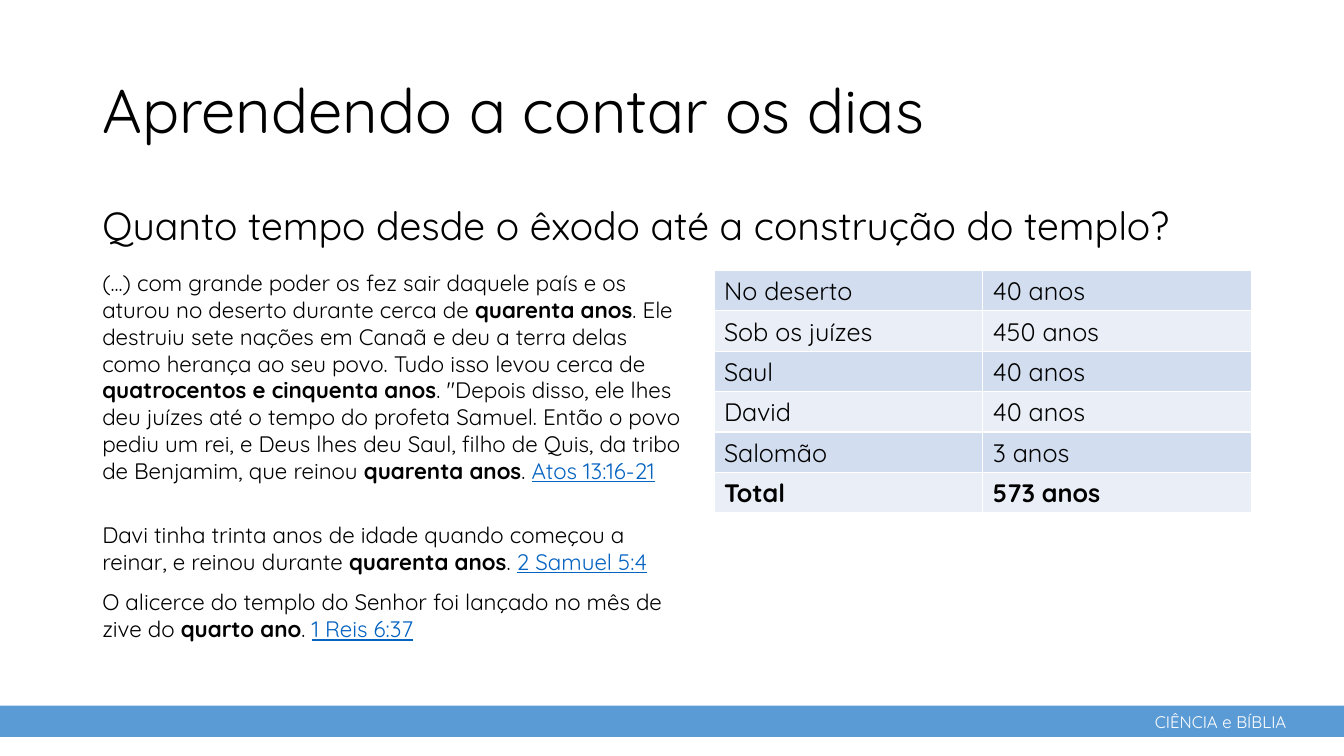
from dataclasses import dataclass

import pptx
import pptx.dml.color
import pptx.enum.shapes
import pptx.enum.text
import pptx.oxml
import pptx.oxml.ns
import pptx.util

COLUMNS, ROWS = 160, 90
UNIT = pptx.util.Inches(7.5) // ROWS


@dataclass(frozen=True)
class Theme:
    font: str = "Quicksand"
    ink: str = "000000"
    paper: str = "FFFFFF"
    bar: str = "5B9BD5"
    reference: str = "0563C1"
    bands: tuple = ("D2DEEF", "EAEFF7")
    title: int = 44
    question: int = 28
    table: int = 18
    passage: int = 16
    footer: int = 12


THEME = Theme()

PASSAGES = [
    ((11, 31.44, 71.5, 30.24),
     "(...) com grande poder os fez sair daquele país e os aturou no deserto "
     "durante cerca de *quarenta anos*. Ele destruiu sete nações em Canaã e deu "
     "a terra delas como herança ao seu povo. Tudo isso levou cerca de "
     "*quatrocentos e cinquenta anos*. \"Depois disso, ele lhes deu juízes até o "
     "tempo do profeta Samuel. Então o povo pediu um rei, e Deus lhes deu Saul, "
     "filho de Quis, da tribo de Benjamim, que reinou *quarenta anos*. ",
     "Atos 13:16-21"),
    ((11, 61.44, 71.5, 7.68),
     "Davi tinha trinta anos de idade quando começou a reinar, e reinou durante "
     "*quarenta anos*. ",
     "2 Samuel 5:4"),
    ((11, 69.48, 71.5, 7.68),
     "O alicerce do templo do Senhor foi lançado no mês de zive do "
     "*quarto ano*. ",
     "1 Reis 6:37"),
]

PERIODS = [
    ("No deserto", "40 anos"),
    ("Sob os juízes", "450 anos"),
    ("Saul", "40 anos"),
    ("David", "40 anos"),
    ("Salomão", "3 anos"),
    ("Total", "573 anos"),
]


def place(box):
    return [pptx.util.Emu(round(v * UNIT)) for v in box]


def rgb(color):
    return pptx.dml.color.RGBColor.from_string(color)


def style(r, size, color=THEME.ink, bold=False, underline=False):
    r.font.name = THEME.font
    r.font.size = pptx.util.Pt(size)
    r.font.color.rgb = rgb(color)
    r.font.bold = bold
    r.font.underline = underline


def text_box(s, box, wrap=True):
    tf = s.shapes.add_textbox(*place(box)).text_frame
    tf.word_wrap = wrap
    return tf


def add_title(s, box, text):
    sp = s.shapes.title
    sp.left, sp.top, sp.width, sp.height = place(box)
    tf = sp.text_frame
    tf.text = text
    tf.word_wrap = True
    tf.auto_size = pptx.enum.text.MSO_AUTO_SIZE.NONE
    tf.vertical_anchor = pptx.enum.text.MSO_ANCHOR.MIDDLE
    p = tf.paragraphs[0]
    p.alignment = pptx.enum.text.PP_ALIGN.LEFT
    p.line_spacing = 0.9
    style(p.runs[0], THEME.title)


def add_question(s, box, text):
    tf = text_box(s, box)
    tf.text = text
    p = tf.paragraphs[0]
    p.line_spacing = 1.2
    style(p.runs[0], THEME.question)


def add_passage(s, box, text, reference):
    p = text_box(s, box).paragraphs[0]
    for i, part in enumerate(text.split("*")):
        r = p.add_run()
        r.text = part
        style(r, THEME.passage, bold=i % 2 == 1)
    r = p.add_run()
    r.text = reference
    style(r, THEME.passage, THEME.reference, underline=True)


def add_borders(cell):
    tc_pr = cell._tc.get_or_add_tcPr()
    for i, side in enumerate(("lnL", "lnR", "lnT", "lnB")):
        tc_pr.insert(i, pptx.oxml.parse_xml(
            f'<a:{side} {pptx.oxml.ns.nsdecls("a")} w="12700"><a:solidFill>'
            f'<a:srgbClr val="{THEME.paper}"/></a:solidFill></a:{side}>'))


def add_periods(s, box, periods):
    left, top, width, height = place(box)
    table = s.shapes.add_table(len(periods), 2, left, top, width, height).table
    table.first_row = False
    for i, period in enumerate(periods):
        table.rows[i].height = height // len(periods)
        for j, text in enumerate(period):
            cell = table.cell(i, j)
            cell.text = text
            cell.fill.solid()
            cell.fill.fore_color.rgb = rgb(THEME.bands[i % 2])
            add_borders(cell)
            r = cell.text_frame.paragraphs[0].runs[0]
            style(r, THEME.table, bold=i == len(periods) - 1)


def add_footer(s, box, text):
    left, top, width, height = box
    sp = s.shapes.add_shape(pptx.enum.shapes.MSO_SHAPE.RECTANGLE, *place(box))
    sp.shadow.inherit = False
    sp.fill.solid()
    sp.fill.fore_color.rgb = rgb(THEME.bar)
    sp.line.fill.background()
    label = (left + width * 0.852, top + 0.12, width * 0.118, height - 0.12)
    tf = text_box(s, label, wrap=False)
    tf.text = text
    style(tf.paragraphs[0].runs[0], THEME.footer, THEME.paper)


def add_counting_slide(prs):
    s = prs.slides.add_slide(prs.slide_layouts[5])
    add_footer(s, (0, 84, COLUMNS, 3.72), "CIÊNCIA e BÍBLIA")
    add_title(s, (11, 4.8, 138, 17.4), "Aprendendo a contar os dias")
    add_question(s, (11, 22.2, 142.4, 10.3),
                 "Quanto tempo desde o êxodo até a construção do templo?")
    for box, text, reference in PASSAGES:
        add_passage(s, box, text, reference)
    add_periods(s, (85, 32.2, 64, 28.8), PERIODS)


def main():
    prs = pptx.Presentation()
    prs.slide_width, prs.slide_height = place((COLUMNS, ROWS))
    add_counting_slide(prs)
    prs.save("out.pptx")


if __name__ == "__main__":
    main()
